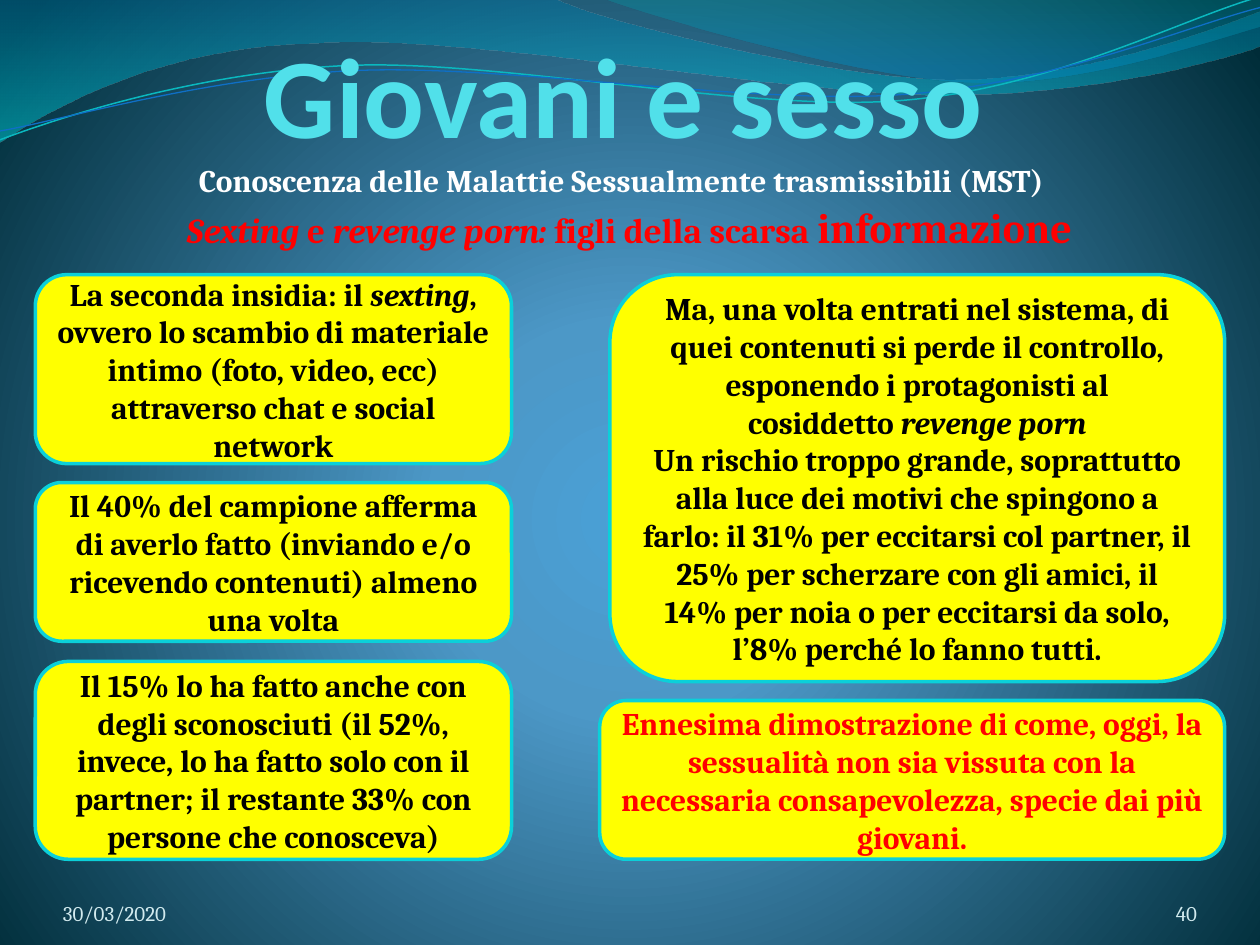
from lxml.etree import SubElement
from pptx import Presentation
from pptx.dml.color import RGBColor
from pptx.enum.shapes import MSO_SHAPE
from pptx.enum.text import MSO_ANCHOR, MSO_AUTO_SIZE, PP_ALIGN
from pptx.oxml.ns import qn
from pptx.oxml.xmlchemy import OxmlElement
from pptx.util import Inches, Pt

BLACK, RED, WHITE, YELLOW = "000000", "FF0000", "FFFFFF", "FFFF00"
EDGE, TITLE, FOOTER = "0BD0D9", "51E0EA", "D1EAEE"
NBSP = chr(160)  # keeps two words on one line

# Each wave: start point, then points (2 numbers) and curves (6 numbers)
WIDE_WAVE = [(0, 0), (4.4, -0.01), (4.76, 0.17, 6.64, 0.63, 7.58, 0.63),
             (8.53, 0.63, 9.58, 0.26, 10, 0.09), (10.01, 0.36),
             (9.83, 0.44, 8.7, 0.76, 7.46, 0.75),
             (6.22, 0.75, 3.82, 0.28, 2.57, 0.34),
             (1.29, 0.36, 0.46, 0.83, -0.01, 1.13), (0, 0)]
RIGHT_WAVE = [(4.79, -0.01), (5.09, 0.11, 6.82, 0.62, 7.69, 0.65),
              (8.56, 0.69, 9.61, 0.32, 10, 0.21), (10, 0), (4.79, -0.01)]
TEAL_LINE = [(0, 1.11), (0.48, 0.93, 1.58, 0.57, 2.77, 0.52),
             (3.95, 0.47, 5.93, 0.89, 7.13, 0.8),
             (8.33, 0.71, 9.38, 0.15, 9.98, -0.02)]
BLUE_LINE = [(0, 1.04), (0.47, 0.96, 1.64, 0.61, 2.83, 0.56),
             (4.03, 0.51, 5.97, 0.84, 7.17, 0.75),
             (8.36, 0.67, 9.41, 0.21, 10, 0.06)]


def rgb(color):
    return RGBColor.from_string(color)


def set_gradient(fill, element, stops, angle=None):
    """Fill with (position, colour, opacity) stops, radial if no angle is given."""
    fill.gradient()
    grad = element.find(".//" + qn("a:gradFill"))
    for child in list(grad):
        grad.remove(child)
    stop_list = SubElement(grad, qn("a:gsLst"))
    for position, color, opacity in stops:
        stop = SubElement(stop_list, qn("a:gs"), pos=str(position * 1000))
        clr = SubElement(stop, qn("a:srgbClr"), val=color)
        if opacity < 100:
            SubElement(clr, qn("a:alpha"), val=str(opacity * 1000))
    if angle is None:
        radial = SubElement(grad, qn("a:path"), {"path": "circle"})
        SubElement(radial, qn("a:fillToRect"),
                   l="10000", t="110000", r="10000", b="100000")
    else:
        SubElement(grad, qn("a:lin"), ang=str(angle * 60000), scaled="1")


def add_curve(s, segments, close):
    """Build the outline from its corners, then bend the curved sides."""
    start, *corners = [tuple(map(Inches, seg[-2:])) for seg in segments]
    builder = s.shapes.build_freeform(*start)
    builder.add_line_segments(corners, close=close)
    sp = builder.convert_to_shape()
    sp.shadow.inherit = False
    outline = sp._element.find(".//" + qn("a:path"))
    for side, seg in zip(outline.findall(qn("a:lnTo")), segments[1:]):
        if len(seg) == 6:
            bend = OxmlElement("a:cubicBezTo")
            for x, y in zip(seg[::2], seg[1::2]):
                SubElement(bend, qn("a:pt"), x=str(Inches(x) - sp.left),
                           y=str(Inches(y) - sp.top))
            outline.replace(side, bend)
    return sp


def add_waves(s):
    for segments, stops in (
            (WIDE_WAVE, [(0, "0074A1", 45), (100, "00C6CF", 55)]),
            (RIGHT_WAVE, [(0, "00A1A9", 30), (80, "008BBF", 45)])):
        sp = add_curve(s, segments, True)
        set_gradient(sp.fill, sp._element, stops, 90)
        sp.line.fill.background()
    for segments, color, width in ((TEAL_LINE, "0AB8BF", 0.85),
                                   (BLUE_LINE, "0F6FC6", 0.75)):
        sp = add_curve(s, segments, False)
        sp.fill.background()
        sp.line.color.rgb = rgb(color)
        sp.line.width = Pt(width)


def add_text(tf, paragraphs, size, color, align=PP_ALIGN.CENTER, bold=True,
             font="Cambria", anchor=MSO_ANCHOR.TOP, insets=None):
    """Write paragraphs of (text, italic[, size]) runs."""
    tf.word_wrap = True
    tf.vertical_anchor = anchor
    if insets:
        tf.margin_left, tf.margin_top, tf.margin_right, tf.margin_bottom = map(
            Inches, insets)
    for i, runs in enumerate(paragraphs):
        p = tf.add_paragraph() if i else tf.paragraphs[0]
        p.alignment = align
        for text, italic, *own_size in runs:
            r = p.add_run()
            r.text = text
            r.font.name = font
            r.font.size = Pt(own_size[0] if own_size else size)
            r.font.bold = bold
            r.font.italic = italic
            r.font.color.rgb = rgb(color)


def add_label(s, box, runs, size, color, **style):
    tf = s.shapes.add_textbox(*map(Inches, box)).text_frame
    add_text(tf, [runs], size, color, **style)
    return tf


def add_title(s, box):
    title = s.shapes.title
    title.left, title.top, title.width, title.height = map(Inches, box)
    add_text(title.text_frame, [[("Giovani e sesso", False)]], 64.8, TITLE,
             font="Calibri", anchor=MSO_ANCHOR.BOTTOM, insets=(0, 0, 0.02, 0))
    s.shapes._spTree.append(title._element)  # in front of the waves


def add_headings(s, left, top):
    topic = add_label(
        s, (left, top, 9.06, 0.4),
        [("Conoscenza delle Malattie Sessualmente trasmissibili (MST) ", False)],
        18, WHITE)
    subtopic = add_label(
        s, (left, top + 0.32, 9.13, 0.5),
        [("Sexting", True), (f"{NBSP}e{NBSP}", False),
         (f"revenge porn:{NBSP}", True), ("figli della scarsa ", False),
         ("informazione", False, 24)], 20, RED)
    for tf in (topic, subtopic):
        tf.auto_size = MSO_AUTO_SIZE.SHAPE_TO_FIT_TEXT


def add_card(s, box, paragraphs, color=BLACK):
    sp = s.shapes.add_shape(MSO_SHAPE.ROUNDED_RECTANGLE, *map(Inches, box))
    sp.shadow.inherit = False
    sp.fill.solid()
    sp.fill.fore_color.rgb = rgb(YELLOW)
    sp.line.color.rgb = rgb(EDGE)
    sp.line.width = Pt(2)
    add_text(sp.text_frame, paragraphs, 18, color, anchor=MSO_ANCHOR.MIDDLE)


def add_left_cards(s, left, top, width):
    cards = (
        (0, 1.5, [(f"La seconda insidia: il{NBSP}", False), ("sexting", True),
                  (", ovvero lo scambio di materiale intimo (foto, video, ecc) "
                   "attraverso chat e social network", False)]),
        (1.65, 1.26, [(f"Il 40% del campione afferma di averlo fatto{NBSP}(inviando "
                       f"e/o ricevendo contenuti){NBSP}almeno una volta", False)]),
        (3.07, 1.57, [(f"Il 15% lo ha fatto anche con degli sconosciuti{NBSP}(il 52%, "
                       "invece, lo ha fatto solo con il partner; il restante 33% con "
                       "persone che conosceva)", False)]))
    for offset, height, runs in cards:
        add_card(s, (left, top + offset, width, height), [runs])


def add_right_cards(s, left, top, width):
    add_card(s, (left + 0.08, top, width - 0.08, 3.23), [
        [("Ma, una volta entrati nel sistema, di quei contenuti si perde il "
          f"controllo, esponendo i protagonisti al cosiddetto{NBSP}", False),
         ("revenge porn", True)],
        [("Un rischio troppo grande, soprattutto alla luce dei motivi che spingono "
          "a farlo: il 31% per eccitarsi col partner, il 25% per scherzare con gli "
          "amici, il 14% per noia o per eccitarsi da solo, l’8% perché lo fanno "
          "tutti.", False)]])
    add_card(s, (left, top + 3.38, width, 1.26), [
        [("Ennesima dimostrazione di come, oggi, la sessualità non sia vissuta con "
          "la necessaria consapevolezza, specie dai più giovani.", False)]], RED)


def add_footer(s, top):
    for left, width, text, align in ((0.5, 2.33, "30/03/2020", PP_ALIGN.LEFT),
                                     (8.67, 0.83, "40", PP_ALIGN.RIGHT)):
        add_label(s, (left, top, width, 0.4), [(text, False)], 12, FOOTER, align=align,
                  bold=False, anchor=MSO_ANCHOR.BOTTOM, insets=(0, 0, 0, 0))


def main():
    prs = Presentation()
    prs.slide_width, prs.slide_height = Inches(10), Inches(7.5)
    s = prs.slides.add_slide(prs.slide_layouts[5])
    set_gradient(s.background.fill, s._element,
                 [(0, "4AA0D6", 100), (25, "4C98C7", 100), (100, "002C38", 100)])
    add_waves(s)
    add_title(s, (0.91, 0.21, 8.1, 1.07))
    add_headings(s, 0.43, 1.23)
    add_left_cards(s, 0.28, 2.18, 3.78)
    add_right_cards(s, 4.76, 2.18, 4.96)
    add_footer(s, 6.95)
    prs.save("out.pptx")


if __name__ == "__main__":
    main()
